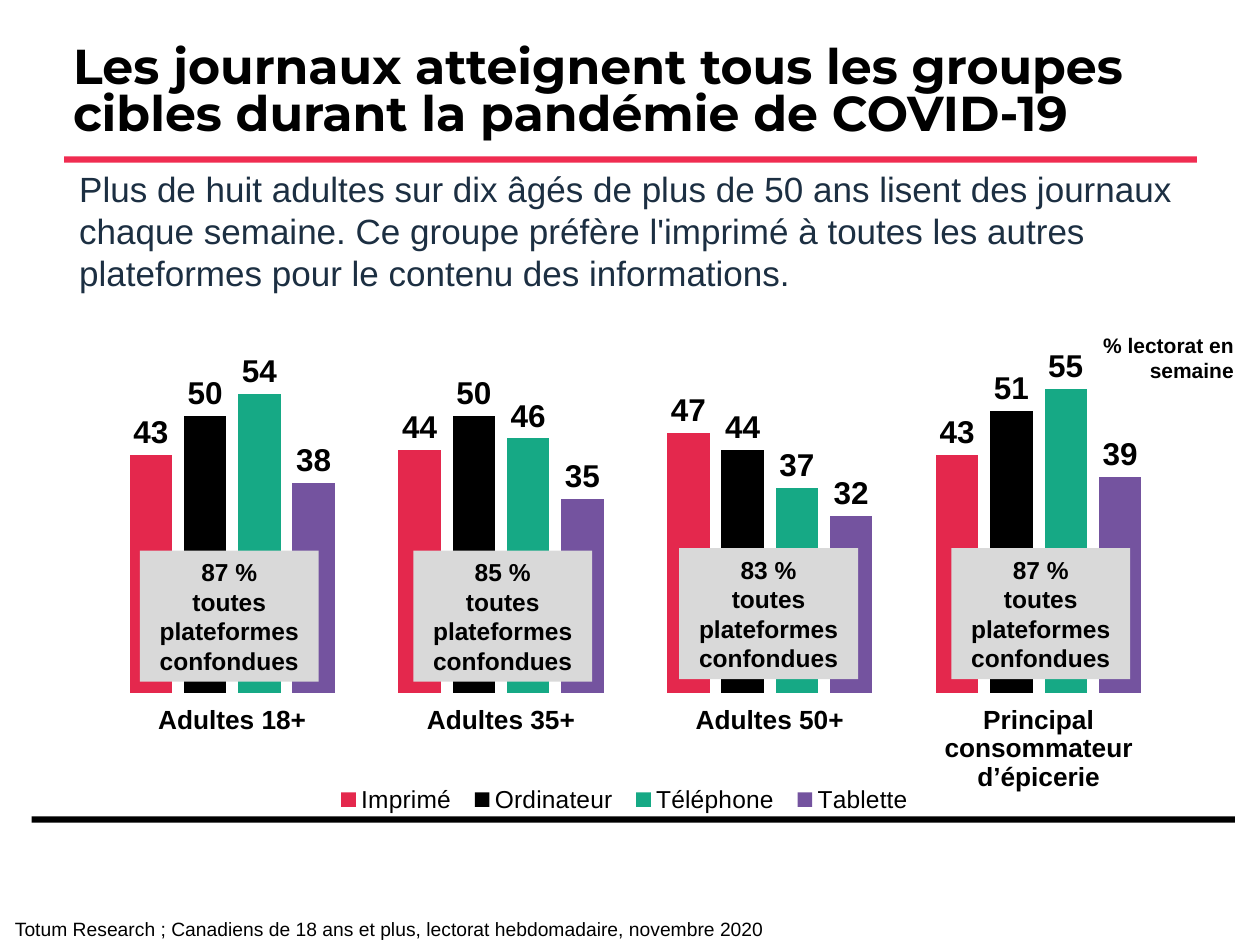
"""Build the slide on newspaper readership by target group and platform."""
import pptx
import pptx.chart.data
import pptx.dml.color
import pptx.enum.chart
import pptx.enum.shapes
import pptx.enum.text
import pptx.oxml
import pptx.oxml.ns
import pptx.util

Inches = pptx.util.Inches
Pt = pptx.util.Pt
RGBColor = pptx.dml.color.RGBColor
Align = pptx.enum.text.PP_ALIGN
AutoSize = pptx.enum.text.MSO_AUTO_SIZE

BLACK = RGBColor(0x00, 0x00, 0x00)
RED = RGBColor(0xF0, 0x2C, 0x51)
NAVY = RGBColor(0x1C, 0x2F, 0x42)
GREY = RGBColor(0xD9, 0xD9, 0xD9)
FONT = "Arial"

TITLE = "Les journaux atteignent tous les groupes cibles durant la pandémie de COVID-19"
SUMMARY = (
    "Plus de huit adultes sur dix âgés de plus de 50 ans lisent des journaux chaque "
    "semaine. Ce groupe préfère l'imprimé à toutes les autres plateformes pour le "
    "contenu des informations."
)
UNIT = "% lectorat en semaine"
SOURCE = "Totum Research ; Canadiens de 18 ans et plus, lectorat hebdomadaire, novembre 2020"
GROUPS = ["Adultes 18+", "Adultes 35+", "Adultes 50+", "Principal consommateur d’épicerie"]
PLATFORMS = [
    ("Imprimé", (43, 44, 47, 43), RGBColor(0xE4, 0x28, 0x4D)),
    ("Ordinateur", (50, 50, 44, 51), BLACK),
    ("Téléphone", (54, 46, 37, 55), RGBColor(0x16, 0xA9, 0x85)),
    ("Tablette", (38, 35, 32, 39), RGBColor(0x74, 0x53, 0x9F)),
]
TOTAL_LABEL = "toutes plateformes confondues"
TOTALS = [("87 %", 1.11, 4.37), ("85 %", 3.28, 4.37), ("83 %", 5.39, 4.35), ("87 %", 7.55, 4.35)]
RULES = [((0.25, 6.48, 9.55, 0.05), BLACK), ((0.51, 1.24, 8.99, 0.05), RED)]
PLOT_LAYOUT = {"layoutTarget": "inner", "xMode": "edge", "yMode": "edge",
               "x": 0.01, "y": 0.169, "w": 0.99, "h": 0.582}
LEGEND_LAYOUT = {"xMode": "edge", "yMode": "edge", "x": 0.22, "y": 0.91, "w": 0.55, "h": 0.055}


def style_font(font, size, color=BLACK, bold=False, name=FONT):
    font.name = name
    font.size = Pt(size)
    font.bold = bold
    font.color.rgb = color


def add_run(paragraph, text, size, color=BLACK, bold=False, name=FONT):
    run = paragraph.add_run()
    run.text = text
    style_font(run.font, size, color, bold, name)


def add_rectangle(slide, box, color):
    shape = slide.shapes.add_shape(
        pptx.enum.shapes.MSO_SHAPE.RECTANGLE, *map(Inches, box))
    shape.shadow.inherit = False
    shape.fill.solid()
    shape.fill.fore_color.rgb = color
    shape.line.fill.background()
    return shape


def add_text(slide, box, text, size, color=BLACK, bold=False, align=Align.LEFT, wrap=True):
    frame = slide.shapes.add_textbox(*map(Inches, box)).text_frame
    frame.word_wrap = wrap
    frame.auto_size = AutoSize.SHAPE_TO_FIT_TEXT
    frame.paragraphs[0].alignment = align
    add_run(frame.paragraphs[0], text, size, color, bold)


def add_title(slide):
    title = slide.shapes.title
    title.left, title.top, title.width, title.height = map(Inches, (0.51, 0.02, 9.11, 1.45))
    frame = title.text_frame
    frame.auto_size = AutoSize.NONE
    frame.vertical_anchor = pptx.enum.text.MSO_ANCHOR.MIDDLE
    frame.margin_left = frame.margin_right = Inches(0.07)
    frame.margin_top = frame.margin_bottom = Inches(0.04)
    paragraph = frame.paragraphs[0]
    paragraph.alignment = Align.LEFT
    paragraph.line_spacing = 0.8
    add_run(paragraph, TITLE, 28, bold=True, name="Montserrat")


def set_layout(element, position, settings):
    for layout in element.findall(pptx.oxml.ns.qn("c:layout")):
        element.remove(layout)
    children = "".join(f'<c:{key} val="{value}"/>' for key, value in settings.items())
    element.insert(position, pptx.oxml.parse_xml(
        f'<c:layout {pptx.oxml.ns.nsdecls("c")}>'
        f'<c:manualLayout>{children}</c:manualLayout></c:layout>'))


def add_readership_chart(slide):
    data = pptx.chart.data.CategoryChartData()
    data.categories = GROUPS
    for name, values, _ in PLATFORMS:
        data.add_series(name, values)
    chart = slide.shapes.add_chart(
        pptx.enum.chart.XL_CHART_TYPE.COLUMN_CLUSTERED,
        *map(Inches, (0.69, 2.1, 8.62, 4.53)), data).chart
    style_font(chart.font, 18)
    chart.has_title = False
    set_layout(chart._chartSpace.chart.plotArea, 0, PLOT_LAYOUT)

    plot = chart.plots[0]
    plot.vary_by_categories = False
    plot.gap_width = 150
    plot.overlap = -28
    for series, (_, _, color) in zip(plot.series, PLATFORMS):
        series.format.fill.solid()
        series.format.fill.fore_color.rgb = color
        labels = series.data_labels
        labels.show_value = True
        labels.position = pptx.enum.chart.XL_LABEL_POSITION.OUTSIDE_END
        style_font(labels.font, 18, bold=True)

    value_axis = chart.value_axis
    value_axis.minimum_scale = 0
    value_axis.maximum_scale = 60
    value_axis.has_major_gridlines = False
    value_axis.visible = False
    category_axis = chart.category_axis
    category_axis.format.line.fill.background()
    style_font(category_axis.tick_labels.font, 15, bold=True)

    chart.has_legend = True
    legend = chart.legend
    legend.position = pptx.enum.chart.XL_LEGEND_POSITION.BOTTOM
    legend.include_in_layout = False
    style_font(legend.font, 14)
    set_layout(legend._element, 1, LEGEND_LAYOUT)


def add_total(slide, total, left, top):
    frame = add_rectangle(slide, (left, top, 1.42, 1.04), GREY).text_frame
    frame.word_wrap = True
    frame.auto_size = AutoSize.SHAPE_TO_FIT_TEXT
    for paragraph, text in ((frame.paragraphs[0], total), (frame.add_paragraph(), TOTAL_LABEL)):
        paragraph.alignment = Align.CENTER
        add_run(paragraph, text, 14, bold=True)


def main():
    presentation = pptx.Presentation()
    presentation.slide_width = Inches(10)
    presentation.slide_height = Inches(7.5)
    slide = presentation.slides.add_slide(presentation.slide_layouts.get_by_name("Title Only"))
    for box, color in RULES:
        add_rectangle(slide, box, color)
    add_title(slide)
    add_readership_chart(slide)
    add_text(slide, (0.53, 1.28, 8.95, 1.11), SUMMARY, 20, NAVY)
    add_text(slide, (0.02, 7.23, 6.24, 0.29), SOURCE, 11, wrap=False)
    for total in TOTALS:
        add_total(slide, *total)
    add_text(slide, (8.54, 2.59, 1.35, 0.5), UNIT, 12, bold=True, align=Align.RIGHT)
    presentation.save("out.pptx")


if __name__ == "__main__":
    main()
